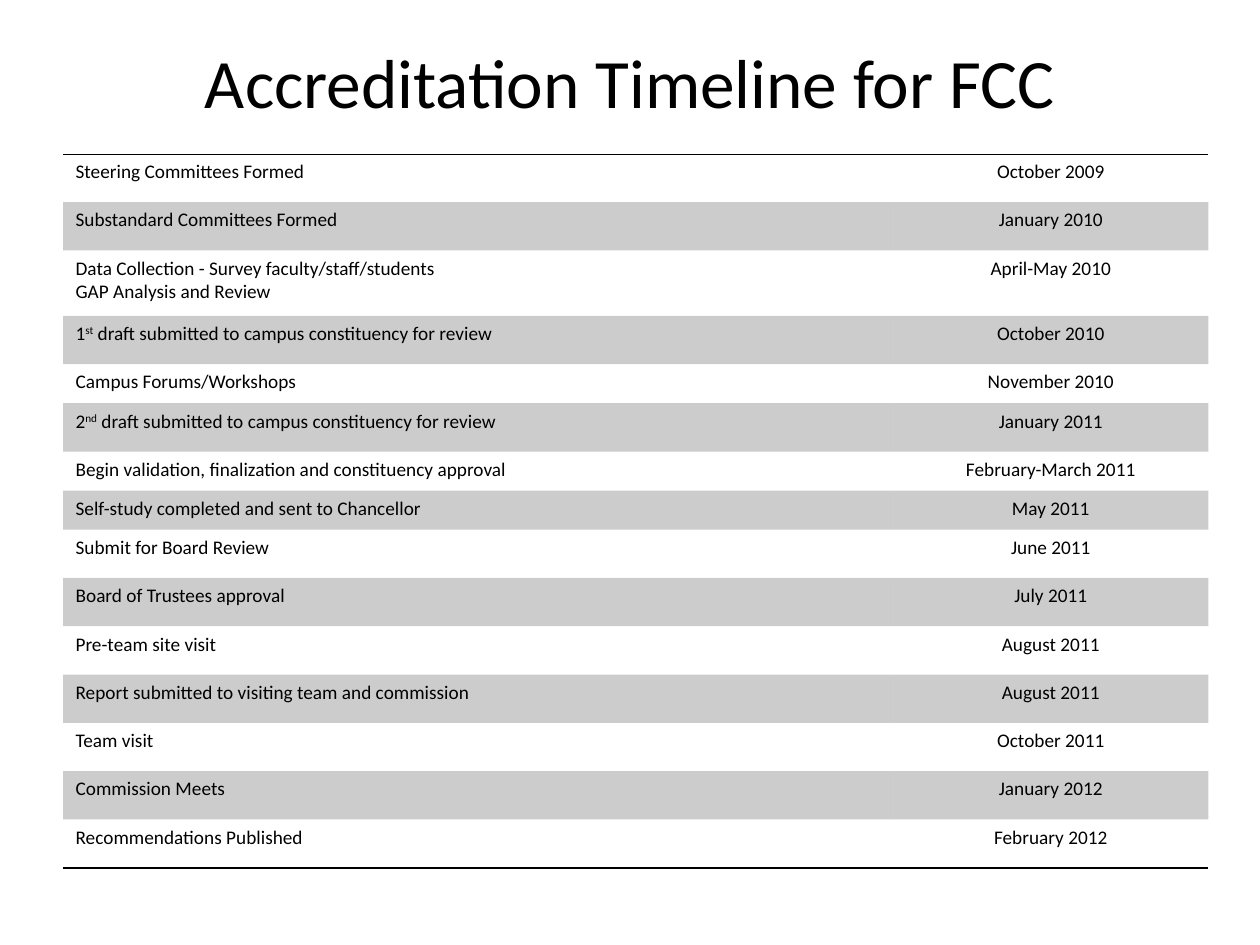
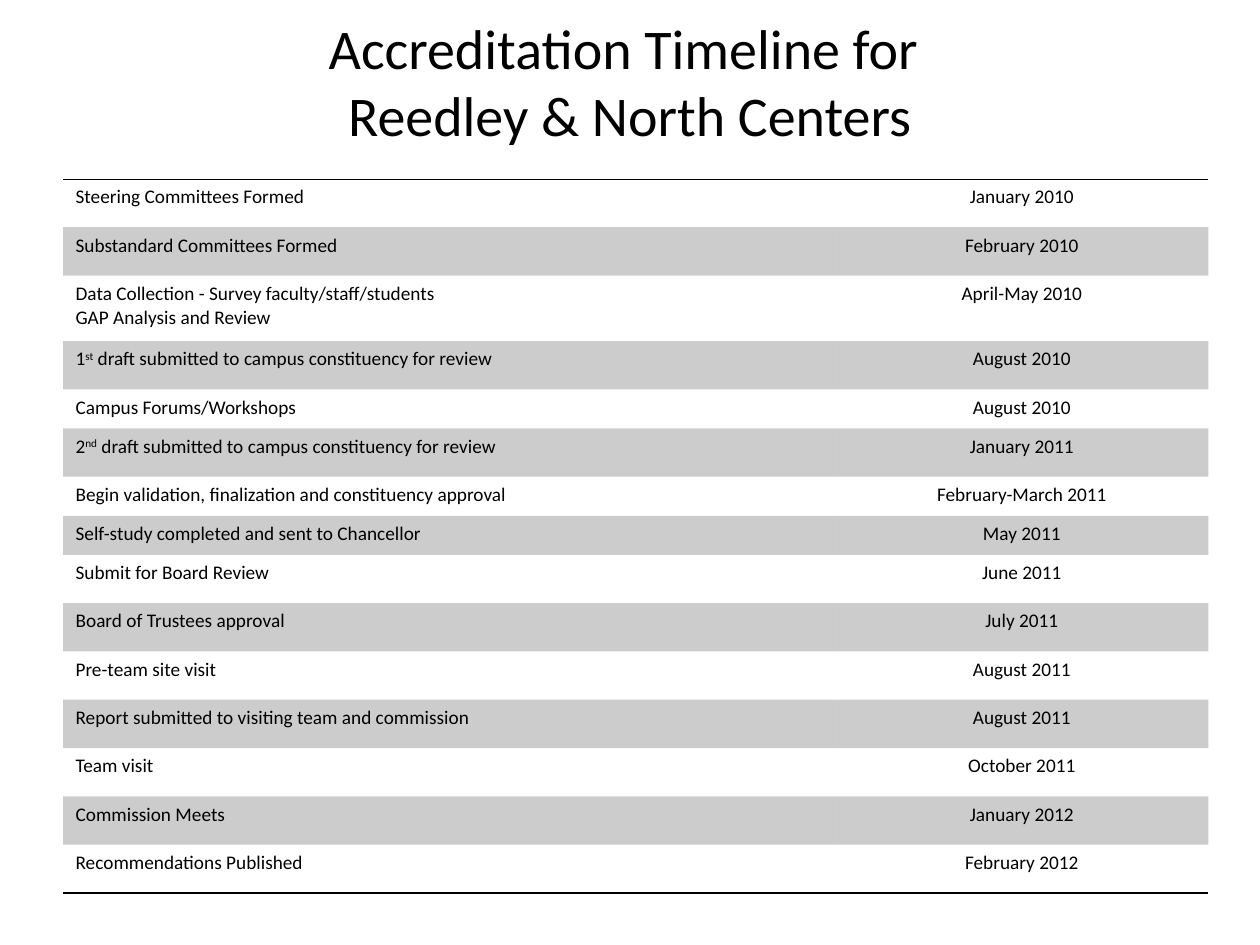
from lxml.etree import SubElement
from pptx import Presentation
from pptx.dml.color import RGBColor
from pptx.enum.text import MSO_ANCHOR, PP_ALIGN
from pptx.oxml import parse_xml
from pptx.oxml.ns import nsdecls, qn
from pptx.util import Inches, Pt

NO_STYLE_NO_GRID = "{2D5ABB26-0587-4C30-8999-92F81FD0307C}"
TABLE_HEIGHT, TWO_LINE_ROW, SHORT_ROW = 5.67, 0.52, 0.31

# Text between carets is superscript; "\v" breaks a line.
MILESTONES = [
    "Steering Committees Formed",
    "Substandard Committees Formed",
    "Data Collection - Survey faculty/staff/students\vGAP Analysis and Review",
    "1^st^ draft submitted to campus constituency for review",
    "Campus Forums/Workshops",
    "2^nd^ draft submitted to campus constituency for review",
    "Begin validation, finalization and constituency approval",
    "Self-study completed and sent to Chancellor",
    "Submit for Board Review",
    "Board of Trustees approval",
    "Pre-team site visit",
    "Report submitted to visiting team and commission",
    "Team visit",
    "Commission Meets",
    "Recommendations Published",
]
FINAL_DATES = [
    "January 2011", "February-March 2011", "May 2011", "June 2011", "July 2011",
    "August 2011", "August 2011", "October 2011", "January 2012", "February 2012",
]
FCC_DATES = ["October 2009", "January 2010", "April-May 2010", "October 2010",
             "November 2010"] + FINAL_DATES
REEDLEY_DATES = ["January 2010", "February 2010", "April-May 2010", "August 2010",
                 "August 2010"] + FINAL_DATES


def rgb(color):
    return RGBColor.from_string(color)


def row_heights():
    """Fixed heights for the two-line and short rows; the rest share what is left."""
    fixed = {2: TWO_LINE_ROW, 4: SHORT_ROW, 6: SHORT_ROW, 7: SHORT_ROW}
    count = len(MILESTONES)
    tall = (TABLE_HEIGHT - sum(fixed.values())) / (count - len(fixed))
    return [fixed.get(i, tall) for i in range(count)]


class Deck:
    font = "Calibri"
    ink = "000000"
    band_alpha = 20

    def __init__(self):
        self.prs = Presentation()
        self.prs.slide_width, self.prs.slide_height = Inches(10), Inches(7.5)

    def add_slide(self):
        self.s = self.prs.slides.add_slide(self.prs.slide_layouts[6])

    def fill_paragraph(self, p, text, size, align):
        p.alignment = align
        p.font.name, p.font.size = self.font, Pt(size)
        p.font.color.rgb = rgb(self.ink)
        for i, part in enumerate(text.split("^")):
            if i % 2:
                r = p.add_run()
                r.text = part
                r._r.get_or_add_rPr().set("baseline", "30000")
                continue
            for j, line in enumerate(part.split("\v")):
                if j:
                    p.add_line_break()
                p.add_run().text = line

    def title(self, text, size):
        sp = self.s.shapes.add_textbox(Inches(0.5), Inches(0.25), Inches(9), Inches(0.78))
        tf = sp.text_frame
        tf.word_wrap = True
        tf.vertical_anchor = MSO_ANCHOR.MIDDLE
        self.fill_paragraph(tf.paragraphs[0], text, size, PP_ALIGN.CENTER)

    def band(self, cell):
        cell.fill.solid()
        cell.fill.fore_color.rgb = rgb(self.ink)
        color = cell._tc.tcPr.find(qn("a:solidFill"))[0]
        SubElement(color, qn("a:alpha")).set("val", str(self.band_alpha * 1000))

    def border(self, cell, side, width):
        """Rule one side of a cell: T is the top, B the bottom."""
        ln = parse_xml(
            f'<a:ln{side} {nsdecls("a")} w="{Pt(width)}"><a:solidFill>'
            f'<a:srgbClr val="{self.ink}"/></a:solidFill></a:ln{side}>')
        cell._tc.get_or_add_tcPr().insert(0, ln)

    def timeline(self, top, widths, dates):
        heights = row_heights()
        sp = self.s.shapes.add_table(len(dates), 2, Inches(0.5), Inches(top),
                                     Inches(sum(widths)), Inches(TABLE_HEIGHT))
        table = sp.table
        table.first_row = table.horz_banding = False
        table._tbl.tblPr.find(qn("a:tableStyleId")).text = NO_STYLE_NO_GRID
        for column, width in zip(table.columns, widths):
            column.width = Inches(width)
        for i, texts in enumerate(zip(MILESTONES, dates)):
            table.rows[i].height = Inches(heights[i])
            for j, align in enumerate((PP_ALIGN.LEFT, PP_ALIGN.CENTER)):
                cell = table.cell(i, j)
                self.fill_paragraph(cell.text_frame.paragraphs[0], texts[j], 11, align)
                if i % 2:
                    self.band(cell)
                else:
                    cell.fill.background()
                if i == 0:
                    self.border(cell, "T", 0.25)
                if i == len(dates) - 1:
                    self.border(cell, "B", 1)


def main():
    deck = Deck()
    for title, size, top, widths, dates in (
        ("Accreditation Timeline for FCC", 39.6, 1.22, (6.59, 2.5), FCC_DATES),
        ("Accreditation Timeline for \vReedley & North Centers", 32, 1.42,
         (6.13, 2.96), REEDLEY_DATES),
    ):
        deck.add_slide()
        deck.title(title, size)
        deck.timeline(top, widths, dates)
    deck.prs.save("out.pptx")


if __name__ == "__main__":
    main()
